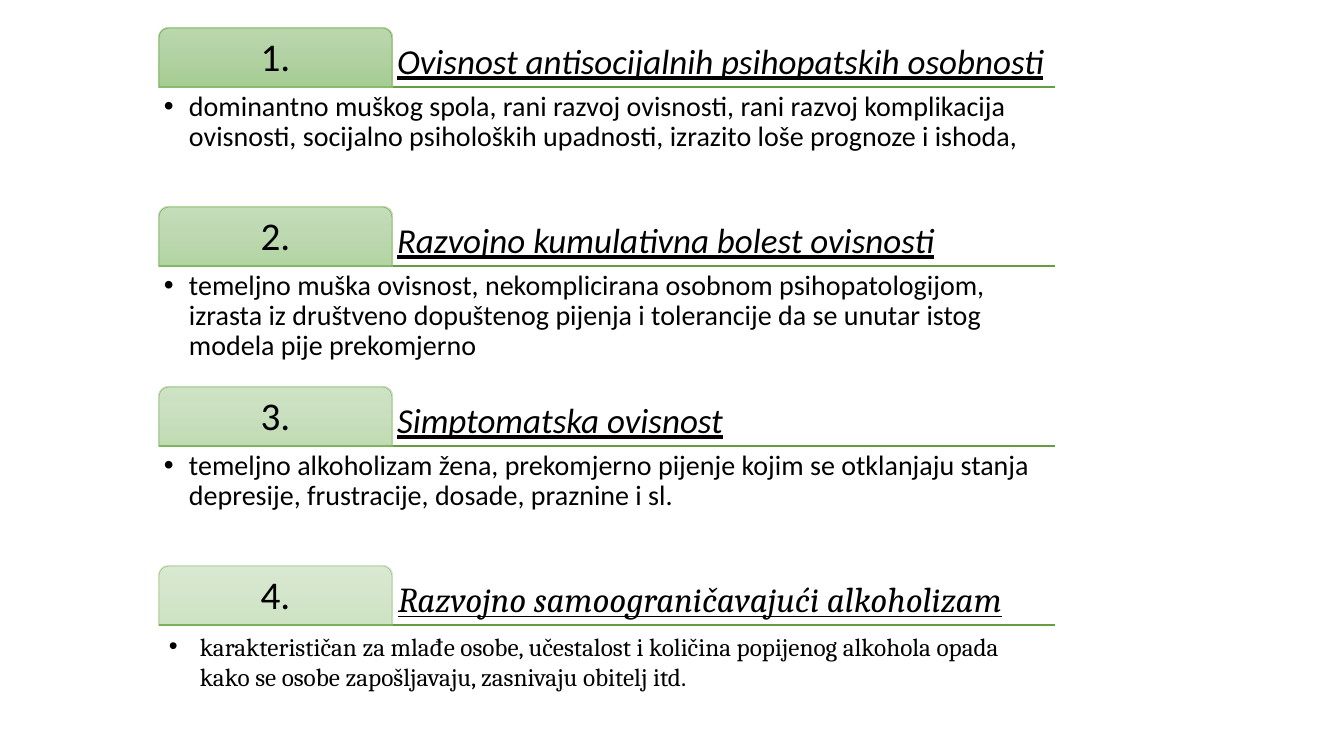
"""Build a slide that lists four numbered types of addiction."""
from lxml import etree
from pptx import Presentation
from pptx.dml.color import RGBColor
from pptx.enum.shapes import MSO_CONNECTOR, MSO_SHAPE
from pptx.enum.text import MSO_ANCHOR, MSO_AUTO_SIZE, PP_ALIGN
from pptx.oxml.ns import qn
from pptx.util import Emu, Pt

EMU_PER_INCH, PX_PER_INCH = 914400, 100.8
SLIDE_WIDTH, SLIDE_HEIGHT = 1344, 756
LEFT, TOP, WIDTH = 159, 28, 896
TAB_WIDTH, TAB_HEIGHT, TAB_PADDING = 233, 59, 3
TWO_ROW_PITCH = 359
BODY_HEIGHT = 118

BLACK = RGBColor(0x00, 0x00, 0x00)
RULE_GREEN = RGBColor(0x66, 0x9D, 0x40)
EDGE_GREEN = RGBColor(0x70, 0xAD, 0x47)
TAB_GREENS = (
    RGBColor(0xB5, 0xD5, 0xA7),
    RGBColor(0xAA, 0xCE, 0x9A),
    RGBColor(0x9C, 0xC9, 0x87),
)
STRAIGHT = MSO_CONNECTOR.STRAIGHT
TAB_SHAPE = MSO_SHAPE.ROUND_2_SAME_RECTANGLE
ANCHOR_TOP, ANCHOR_MIDDLE, ANCHOR_BOTTOM = MSO_ANCHOR.TOP, MSO_ANCHOR.MIDDLE, MSO_ANCHOR.BOTTOM
ALIGN_LEFT, ALIGN_CENTER = PP_ALIGN.LEFT, PP_ALIGN.CENTER
FIT_SHAPE = MSO_AUTO_SIZE.SHAPE_TO_FIT_TEXT

TYPES = (
    ("Ovisnost antisocijalnih psihopatskih osobnosti",
     "dominantno muškog spola, rani razvoj ovisnosti, rani razvoj komplikacija ovisnosti, "
     "socijalno psiholoških upadnosti, izrazito loše prognoze i ishoda,"),
    ("Razvojno kumulativna bolest ovisnosti",
     "temeljno muška ovisnost, nekomplicirana osobnom psihopatologijom, izrasta iz društveno "
     "dopuštenog pijenja i tolerancije da se unutar istog modela pije prekomjerno"),
    ("Simptomatska ovisnost",
     "temeljno alkoholizam žena, prekomjerno pijenje kojim se otklanjaju stanja depresije, "
     "frustracije, dosade, praznine i sl."),
    ("Razvojno samoograničavajući alkoholizam",
     "karakterističan za mlađe osobe, učestalost i količina popijenog alkohola opada "
     "kako se osobe zapošljavaju, zasnivaju obitelj itd."),
)
TAB_OPACITIES = (90, 77, 63, 50)


def px(length):
    """Turn pixels into EMU."""
    return Emu(round(length * EMU_PER_INCH / PX_PER_INCH))


def add_alpha(color_element, opacity):
    """Set the opacity, in percent, of a colour element."""
    etree.SubElement(color_element, qn("a:alpha"), val=str(opacity * 1000))


def add_rule(slide, y):
    """Draw the line under one heading."""
    rule = slide.shapes.add_connector(STRAIGHT, px(LEFT), px(y), px(LEFT + WIDTH), px(y))
    rule.line.color.rgb = RULE_GREEN
    rule.line.width = Pt(1)
    etree.SubElement(rule._element.spPr, qn("a:effectLst"))


def add_tab(slide, top, opacity):
    """Draw a translucent green tab with rounded top corners."""
    tab = slide.shapes.add_shape(TAB_SHAPE, px(LEFT), px(top), px(TAB_WIDTH), px(TAB_HEIGHT))
    tab.shadow.inherit = False
    tab.adjustments[0] = 0.17
    tab.adjustments[1] = 0
    tab.line.color.rgb = EDGE_GREEN
    tab.line.width = Pt(0.5)
    properties = tab._element.spPr
    add_alpha(properties.find(".//" + qn("a:srgbClr")), opacity)
    tab.fill.gradient()
    tab.fill.gradient_angle = 270
    stops = properties.find(".//" + qn("a:gsLst"))
    for stop in list(stops):
        stops.remove(stop)
    for index, green in enumerate(TAB_GREENS):
        stop = etree.SubElement(stops, qn("a:gs"), pos=str(index * 50000))
        add_alpha(etree.SubElement(stop, qn("a:srgbClr"), val=str(green)), opacity)


def add_text(slide, text, box, size, font="Calibri", anchor=ANCHOR_TOP, align=ALIGN_LEFT,
             insets=(5, 5), spacing=0.9, wrap=True):
    """Add a one-paragraph text box and return its shape."""
    shape = slide.shapes.add_textbox(*map(px, box))
    frame = shape.text_frame
    frame.word_wrap = wrap
    frame.vertical_anchor = anchor
    frame.margin_left = frame.margin_right = px(insets[0])
    frame.margin_top = frame.margin_bottom = px(insets[1])
    paragraph = frame.paragraphs[0]
    paragraph.text = text
    paragraph.alignment = align
    paragraph.line_spacing = spacing
    paragraph.font.name = font
    paragraph.font.size = Pt(size)
    paragraph.font.color.rgb = BLACK
    return shape


def add_number(slide, number, top):
    """Write the number centred on its tab."""
    box = (LEFT + TAB_PADDING, top + TAB_PADDING, TAB_WIDTH - 2 * TAB_PADDING,
           TAB_HEIGHT - TAB_PADDING)
    add_text(slide, f"{number}.", box, 28, anchor=ANCHOR_MIDDLE, align=ALIGN_CENTER,
             insets=(6, 6))


def add_heading(slide, text, box, **style):
    """Write an italic, underlined heading."""
    shape = add_text(slide, text, box, 25, **style)
    font = shape.text_frame.paragraphs[0].font
    font.italic = True
    font.underline = True
    return shape


def add_bullet(slide, text, box, size, indent, **style):
    """Write a bulleted description with a hanging indent."""
    shape = add_text(slide, text, box, size, **style)
    properties = shape.text_frame.paragraphs[0]._p.get_or_add_pPr()
    properties.set("marL", str(px(indent)))
    properties.set("indent", str(-px(indent)))
    bullet_font = etree.Element(qn("a:buFont"), typeface="Arial")
    bullet = etree.Element(qn("a:buChar"), char="•")
    properties.find(qn("a:defRPr")).addprevious(bullet_font)
    bullet_font.addnext(bullet)
    return shape


def add_calibri_text(slide, heading, description, top):
    """Write the heading and description of a regular row."""
    heading_box = (LEFT + TAB_WIDTH, top, WIDTH - TAB_WIDTH, TAB_HEIGHT)
    add_heading(slide, heading, heading_box, anchor=ANCHOR_BOTTOM)
    body_box = (LEFT, top + TAB_HEIGHT, WIDTH, BODY_HEIGHT)
    add_bullet(slide, description, body_box, 20, 25)


def add_cambria_text(slide, heading, description, top):
    """Write the heading and description of the last row."""
    style = {"font": "Cambria", "insets": (10, 5), "spacing": 1.0}
    heading_box = (LEFT + TAB_WIDTH - 4, top + 7, 648, 52)
    body_box = (LEFT, top + TAB_HEIGHT + 1, WIDTH, 72)
    for shape in (add_heading(slide, heading, heading_box, wrap=False, **style),
                  add_bullet(slide, description, body_box, 18, 31, **style)):
        shape.text_frame.auto_size = FIT_SHAPE


def main():
    """Build and save the slide."""
    presentation = Presentation()
    presentation.slide_width = px(SLIDE_WIDTH)
    presentation.slide_height = px(SLIDE_HEIGHT)
    slide = presentation.slides.add_slide(presentation.slide_layouts[6])
    tops = [TOP + index * TWO_ROW_PITCH // 2 for index in range(len(TYPES))]
    for top in tops:
        add_rule(slide, top + TAB_HEIGHT)
    for number, (top, opacity, texts) in enumerate(zip(tops, TAB_OPACITIES, TYPES), 1):
        add_tab(slide, top, opacity)
        add_number(slide, number, top)
        add_row_text = add_cambria_text if number == len(TYPES) else add_calibri_text
        add_row_text(slide, *texts, top)
    presentation.save("out.pptx")


if __name__ == "__main__":
    main()
